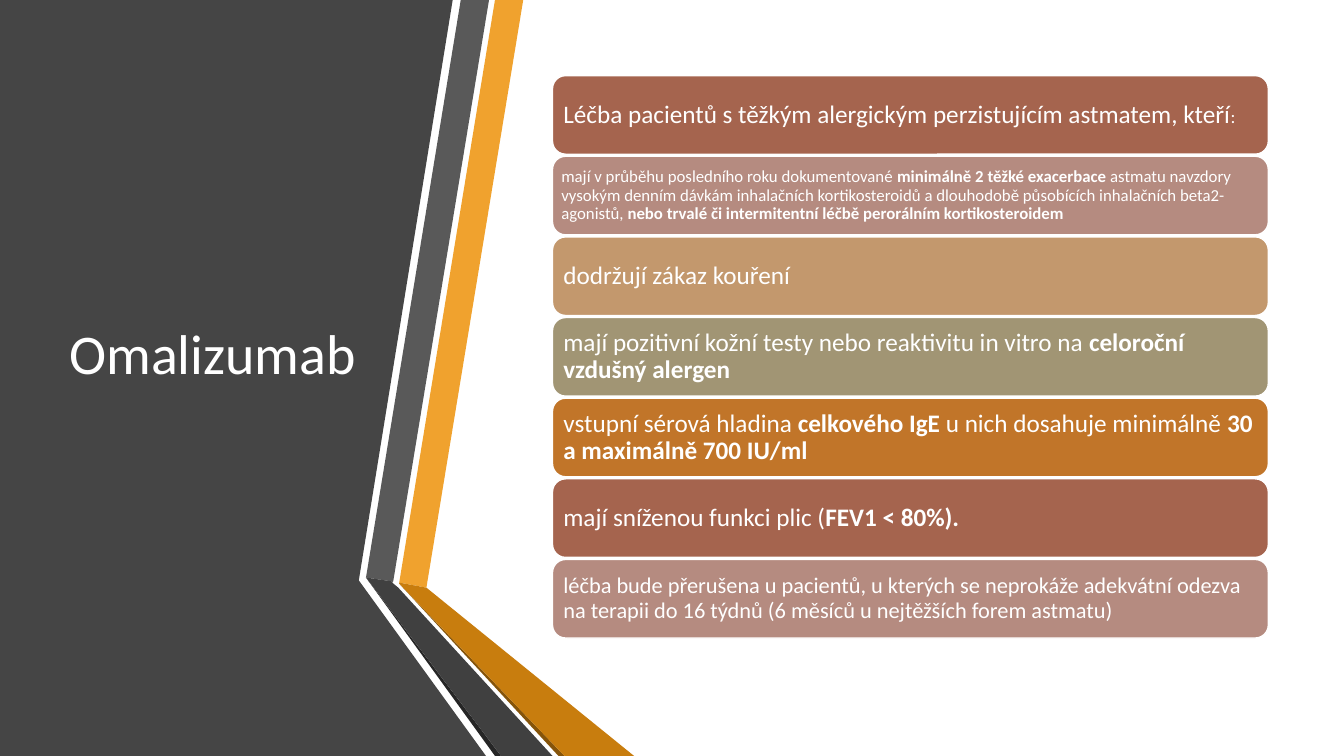
from pptx import Presentation
from pptx.dml.color import RGBColor
from pptx.enum.shapes import MSO_SHAPE as Shape
from pptx.enum.text import MSO_ANCHOR as Anchor, PP_ALIGN as Align
from pptx.util import Pt

EMU_PER_PX = 9144

WHITE = RGBColor(0xFF, 0xFF, 0xFF)
CHARCOAL = RGBColor(0x45, 0x45, 0x45)
GRAY = RGBColor(0x59, 0x59, 0x59)
DARK_GRAY = RGBColor(0x40, 0x40, 0x40)
BLACK_GRAY = RGBColor(0x26, 0x26, 0x26)
AMBER = RGBColor(0xF0, 0xA2, 0x2E)
DARK_AMBER = RGBColor(0xC8, 0x7D, 0x0E)
BROWN = RGBColor(0x85, 0x54, 0x0A)
RUST = RGBColor(0xA5, 0x64, 0x4E)
ROSE = RGBColor(0xB5, 0x8B, 0x80)
TAN = RGBColor(0xC3, 0x98, 0x6D)
OLIVE = RGBColor(0xA1, 0x95, 0x74)
ORANGE = RGBColor(0xC1, 0x75, 0x29)

RIBBONS = [
    (CHARCOAL, [(0, 0), (449, 0), (356, 575), (356, 576), (482, 750), (0, 750)]),
    (AMBER, [(396, 578), (423, 583), (519, 0), (491, 0)]),
    (GRAY, [(485, 0), (457, 0), (363, 573), (390, 577)]),
    (BLACK_GRAY, [(363, 573), (491, 750), (497, 750)]),
    (BROWN, [(396, 579), (554, 750), (560, 750)]),
    (DARK_AMBER, [(396, 579), (560, 750), (629, 750), (423, 583), (396, 578)]),
    (DARK_GRAY, [(548, 750), (395, 583), (389, 578), (390, 577), (363, 573), (497, 750)]),
]

CRITERIA = [
    (RUST, [("Léčba pacientů s těžkým alergickým perzistujícím astmatem, kteří", {}),
            (":", {"size": 13})]),
    (ROSE, [("mají v průběhu posledního roku dokumentované ", {"size": 12}),
            ("minimálně 2 těžké exacerbace ", {"size": 12, "bold": True}),
            ("astmatu navzdory vysokým denním dávkám inhalačních kortikosteroidů "
             "a dlouhodobě působících inhalačních beta2-agonistů, ", {"size": 12}),
            ("nebo trvalé či intermitentní léčbě perorálním kortikosteroidem",
             {"size": 12, "bold": True})]),
    (TAN, [("dodržují zákaz kouření", {})]),
    (OLIVE, [("mají pozitivní kožní testy nebo reaktivitu in vitro na ", {}),
             ("celoroční vzdušný alergen", {"bold": True})]),
    (ORANGE, [("vstupní sérová hladina ", {}),
              ("celkového IgE ", {"bold": True}),
              ("u nich dosahuje minimálně ", {}),
              ("30 a maximálně 700 IU/ml", {"bold": True})]),
    (RUST, [("mají sníženou funkci plic (", {}),
            ("FEV1 < 80%).", {"bold": True})]),
    (ROSE, [("léčba bude přerušena u pacientů, u kterých se neprokáže adekvátní odezva "
             "na terapii do 16 týdnů (6 měsíců u nejtěžších forem astmatu)", {"size": 16})]),
]


def px(length):
    return length * EMU_PER_PX


def add_span(para, text, size=18, bold=False, color=WHITE, face="Calibri"):
    span = para.add_run()
    span.text = text
    span.font.name = face
    span.font.size = Pt(size)
    span.font.bold = bold
    span.font.color.rgb = color


class Painter:
    def __init__(self, page):
        self.page = page
        self.line_spacing = 0.9

    def ribbon(self, color, points):
        builder = self.page.shapes.build_freeform(*points[0], scale=EMU_PER_PX)
        builder.add_line_segments(points[1:], close=True)
        shape = builder.convert_to_shape()
        shape.shadow.inherit = False
        shape.fill.solid()
        shape.fill.fore_color.rgb = color
        shape.line.fill.background()

    def fill_text(self, box, spans, inset_x, inset_y):
        frame = box.text_frame
        frame.word_wrap = True
        frame.vertical_anchor = Anchor.MIDDLE
        frame.margin_left = frame.margin_right = px(inset_x)
        frame.margin_top = frame.margin_bottom = px(inset_y)
        para = frame.paragraphs[0]
        para.alignment = Align.LEFT
        para.line_spacing = self.line_spacing
        for text, style in spans:
            add_span(para, text, **style)

    def title(self, text, left, top, width, height):
        box = self.page.shapes.add_textbox(px(left), px(top), px(width), px(height))
        self.fill_text(box, [(text, {"size": 40})], 10, 5)

    def card(self, color, spans, left, top, width, height, inset):
        box = self.page.shapes.add_shape(
            Shape.ROUNDED_RECTANGLE, px(left), px(top), px(width), px(height))
        box.shadow.inherit = False
        box.fill.solid()
        box.fill.fore_color.rgb = color
        box.line.color.rgb = WHITE
        box.line.width = Pt(1)
        self.fill_text(box, spans, inset, inset)


def main():
    deck = Presentation()
    deck.slide_width, deck.slide_height = px(1333), px(750)
    painter = Painter(deck.slides.add_slide(deck.slide_layouts[6]))
    for color, points in RIBBONS:
        painter.ribbon(color, points)
    painter.title("Omalizumab", 59, 75, 304, 558)
    for row, (color, spans) in enumerate(CRITERIA):
        inset = 5 if color == ROSE and row == 1 else 7
        painter.card(color, spans, 548, 75 + 80 * row, 710, 78, inset)
    deck.save("out.pptx")


if __name__ == "__main__":
    main()
